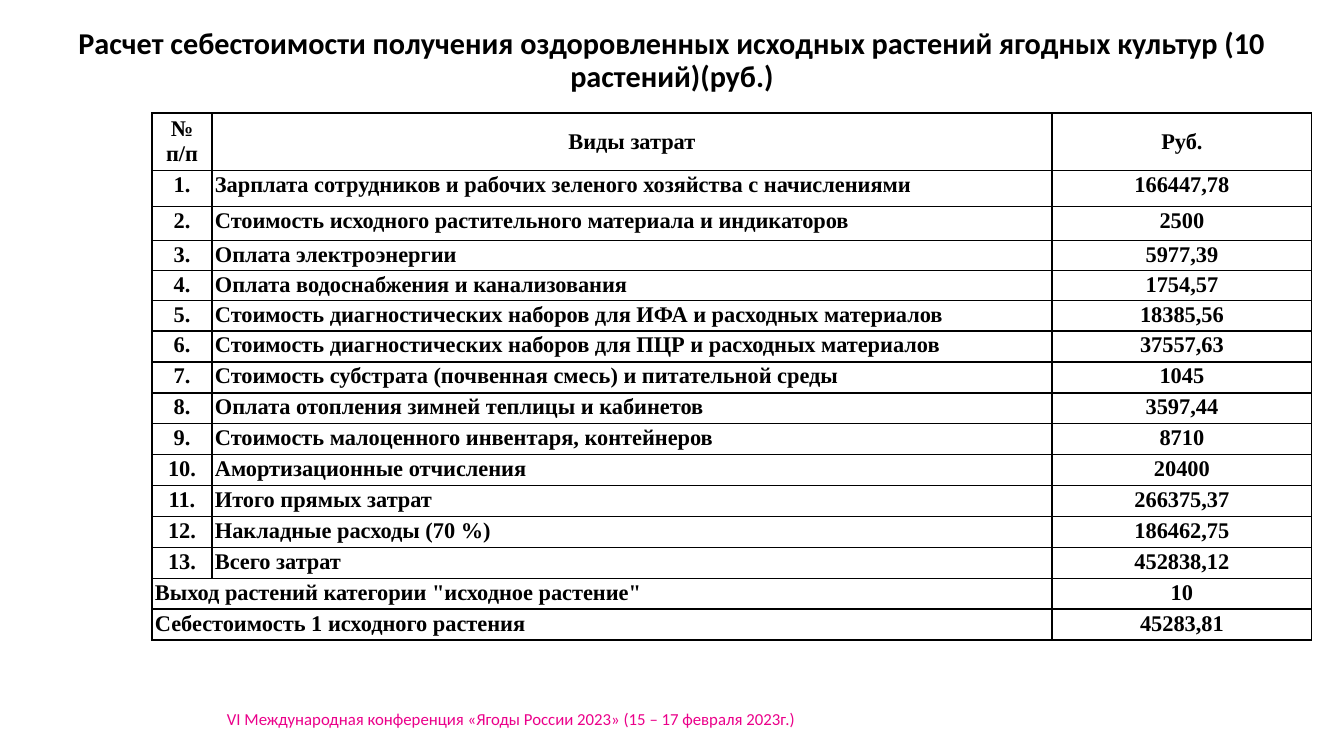
from dataclasses import dataclass
from typing import Any

from lxml.etree import SubElement
from pptx import Presentation
from pptx.dml.color import RGBColor
from pptx.enum.text import MSO_AUTO_SIZE as Fit, MSO_VERTICAL_ANCHOR as Anchor, PP_PARAGRAPH_ALIGNMENT as Align
from pptx.oxml.ns import qn
from pptx.util import Pt

COLOURS = {"ink": "000000", "paper": "FFFFFF", "conference": "EB008A"}
PX_PER_INCH = 100.8
SLIDE_SIZE = (1344, 756)
COLUMN_WIDTHS = (60, 840, 260)
ROW_HEIGHTS = (55, 36, 34, 27, 27, 30, 31, 31) + (27,) * 8
TIGHT_ROWS = range(1, 8)


@dataclass(frozen=True)
class Cost:
    name: str
    roubles: str
    numbered: bool = True


COSTS = (
    Cost("Зарплата сотрудников и рабочих зеленого хозяйства с начислениями", "166447,78"),
    Cost("Стоимость исходного растительного материала и индикаторов", "2500"),
    Cost("Оплата электроэнергии", "5977,39"),
    Cost("Оплата водоснабжения и канализования", "1754,57"),
    Cost("Стоимость диагностических наборов для ИФА и расходных материалов", "18385,56"),
    Cost("Стоимость диагностических наборов для ПЦР и расходных материалов", "37557,63"),
    Cost("Стоимость субстрата (почвенная смесь) и питательной среды", "1045"),
    Cost("Оплата отопления зимней теплицы и кабинетов", "3597,44"),
    Cost("Стоимость малоценного инвентаря, контейнеров", "8710"),
    Cost("Амортизационные отчисления", "20400"),
    Cost("Итого прямых затрат", "266375,37"),
    Cost("Накладные расходы (70 %)", "186462,75"),
    Cost("Всего затрат", "452838,12"),
    Cost('Выход растений категории "исходное растение"', "10", numbered=False),
    Cost("Себестоимость 1 исходного растения", "45283,81", numbered=False),
)


def px(length: int) -> int:
    return round(length * 914400 / PX_PER_INCH)


def apply(target: Any, values: dict[str, Any]) -> None:
    for attribute, value in values.items():
        setattr(target, attribute, value)


def place(left: int, top: int, width: int, height: int) -> dict[str, int]:
    return {"left": px(left), "top": px(top), "width": px(width), "height": px(height)}


def write(frame: Any, text: str, font: dict[str, Any], layout: dict[str, Any], colour: str = "ink") -> None:
    paragraph = frame.paragraphs[0]
    apply(paragraph, layout)
    run = paragraph.add_run()
    run.text = text
    apply(run.font, font)
    run.font.color.rgb = RGBColor.from_string(COLOURS[colour])


def draw_borders(cell: Any) -> None:
    properties = cell._tc.get_or_add_tcPr()
    for side in ("a:lnL", "a:lnR", "a:lnT", "a:lnB"):
        line = SubElement(properties, qn(side), w=str(Pt(1)))
        fill = SubElement(line, qn("a:solidFill"))
        SubElement(fill, qn("a:srgbClr"), val=COLOURS["ink"])


def draw_title(slide: Any) -> None:
    title = slide.shapes.title
    apply(title, place(0, 39, 1344, 110))
    apply(title.text_frame, {"word_wrap": True, "auto_size": Fit.NONE, "vertical_anchor": Anchor.MIDDLE,
                             "margin_top": 0, "margin_bottom": px(66)})
    write(title.text_frame,
          "Расчет себестоимости получения оздоровленных исходных растений ягодных культур (10 растений)(руб.)",
          {"name": "Calibri", "size": Pt(21.6), "bold": True},
          {"alignment": Align.CENTER, "line_spacing": 0.9})


def draw_conference(slide: Any) -> None:
    conference = slide.shapes.add_textbox(**place(217, 704, 672, 30))
    apply(conference.text_frame, {"word_wrap": True, "auto_size": Fit.SHAPE_TO_FIT_TEXT})
    write(conference.text_frame, "VI Международная конференция «Ягоды России 2023» (15 – 17 февраля 2023г.)",
          {"name": "Calibri", "size": Pt(12)}, {"alignment": Align.LEFT}, "conference")


def cost_rows() -> list[tuple[str, str, str]]:
    rows = [("№ п/п", "Виды затрат", "Руб.")]
    for number, cost in enumerate(COSTS, 1):
        labels = (f"{number}.", cost.name) if cost.numbered else (cost.name, "")
        rows.append((*labels, cost.roubles))
    return rows


def draw_costs(slide: Any) -> None:
    rows = cost_rows()
    area = place(152, 113, sum(COLUMN_WIDTHS), sum(ROW_HEIGHTS))
    costs = slide.shapes.add_table(len(rows), len(COLUMN_WIDTHS), **area).table
    apply(costs, {"first_row": False, "horz_banding": False})
    for column, width in zip(costs.columns, COLUMN_WIDTHS):
        column.width = px(width)
    for row, height in zip(costs.rows, ROW_HEIGHTS):
        row.height = px(height)

    font = {"name": "Times New Roman", "size": Pt(16), "bold": True}
    margins = {"margin_left": px(3), "margin_right": px(3), "margin_top": px(2), "margin_bottom": px(2)}
    for r, texts in enumerate(rows):
        spanning = r > 0 and not COSTS[r - 1].numbered
        if spanning:
            costs.cell(r, 0).merge(costs.cell(r, 1))
        for c, text in enumerate(texts):
            cell = costs.cell(r, c)
            apply(cell, {**margins, "vertical_anchor": Anchor.TOP if r else Anchor.MIDDLE})
            draw_borders(cell)
            cell.fill.solid()
            cell.fill.fore_color.rgb = RGBColor.from_string(COLOURS["paper"])
            if cell.is_spanned:
                continue
            named = r > 0 and c == (0 if spanning else 1)
            write(cell.text_frame, text, font,
                  {"alignment": Align.LEFT if named else Align.CENTER,
                   "line_spacing": 0.97 if r in TIGHT_ROWS else 1.0})


def main() -> None:
    deck = Presentation()
    deck.slide_width, deck.slide_height = map(px, SLIDE_SIZE)
    slide = deck.slides.add_slide(deck.slide_layouts[5])
    draw_conference(slide)
    draw_title(slide)
    draw_costs(slide)
    deck.save("out.pptx")


if __name__ == "__main__":
    main()
